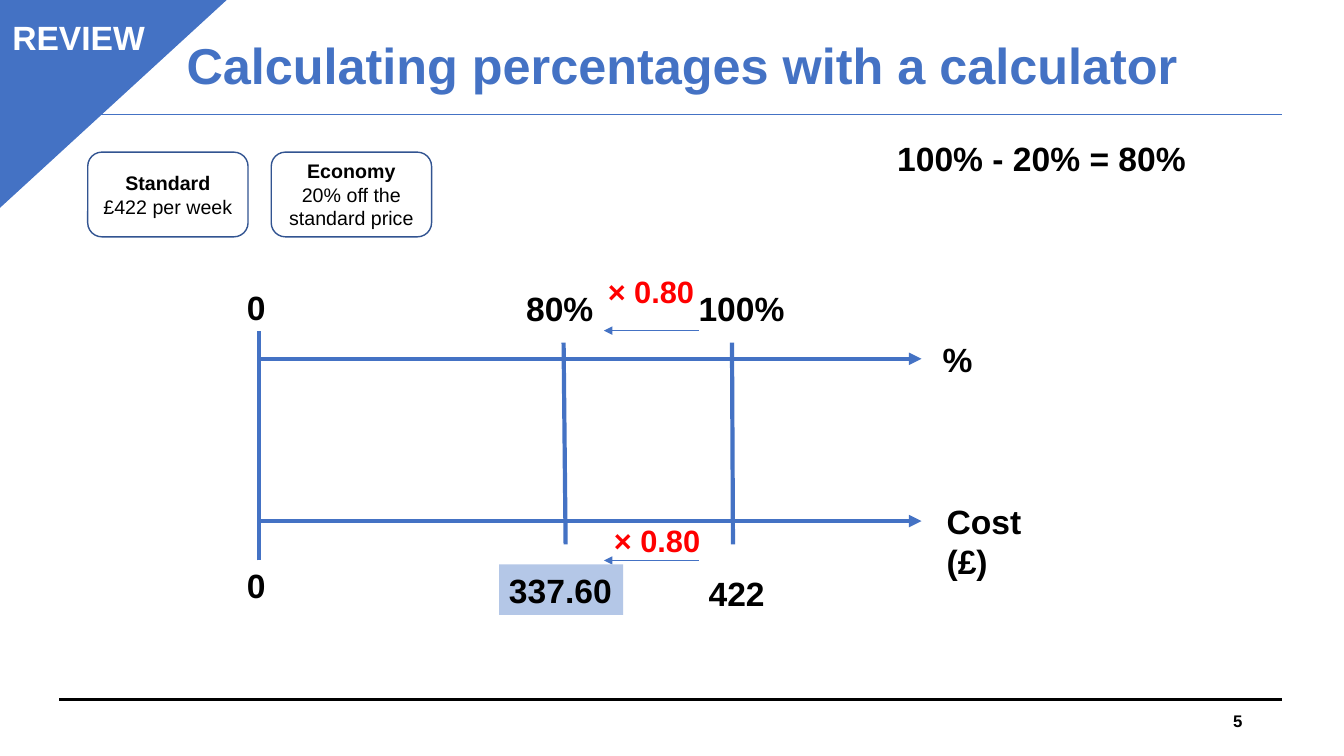
import lxml.etree
import pptx
import pptx.dml.color
import pptx.enum.shapes
import pptx.enum.text
import pptx.oxml.ns
import pptx.util

Inches = pptx.util.Inches
Shapes = pptx.enum.shapes.MSO_SHAPE
Align = pptx.enum.text.PP_ALIGN
Anchor = pptx.enum.text.MSO_ANCHOR
qn = pptx.oxml.ns.qn

BLUE, BLACK, WHITE, RED = "4472C4", "000000", "FFFFFF", "FF0000"
DARK_BLUE, PALE_BLUE = "325491", "B4C7E7"


def set_colour(target, colour):
    """Colour a fill, or a font or line through its fill."""
    fill = getattr(target, "fill", target)
    fill.solid()
    fill.fore_color.rgb = pptx.dml.color.RGBColor.from_string(colour)


def write_text(shape, lines, size=24, colour=BLACK, align=Align.LEFT,
               anchor=Anchor.TOP, wrap=True):
    """Write one paragraph a line; the first is bold."""
    frame = shape.text_frame
    frame.word_wrap = wrap
    frame.vertical_anchor = anchor
    frame.text = "\n".join(lines)
    for index, paragraph in enumerate(frame.paragraphs):
        paragraph.alignment = align
        font = paragraph.runs[0].font
        values = {"name": "Arial", "size": pptx.util.Pt(size), "bold": index == 0}
        for name, value in values.items():
            setattr(font, name, value)
        set_colour(font, colour)


presentation = pptx.Presentation()
presentation.slide_width = Inches(13.33)
presentation.slide_height = Inches(7.5)
slide = presentation.slides.add_slide(presentation.slide_layouts[5])

# Title
title = slide.shapes.title
place = {"left": 1.75, "top": 0.12, "width": 10.47, "height": 1.11}
for name, value in place.items():
    setattr(title, name, Inches(value))
write_text(title, ["Calculating percentages with a calculator"], 36, BLUE,
           anchor=Anchor.MIDDLE)
title.text_frame.paragraphs[0].line_spacing = 0.9

# Rules, number line axes, ticks and multiplier arrows
lines = [
    (0.59, 6.94, 12.72, 6.94, BLACK, 1.5, False),
    (0.59, 1.14, 12.72, 1.14, BLUE, 0.75, False),
    (2.57, 3.56, 9.14, 3.56, BLUE, 3, True),
    (2.57, 5.17, 9.14, 5.17, BLUE, 3, True),
    (2.57, 5.56, 2.57, 3.28, BLUE, 3, False),
    (7.27, 5.4, 7.26, 3.4, BLUE, 3, False),
    (5.61, 5.4, 5.59, 3.4, BLUE, 3, False),
    (6.93, 3.28, 5.99, 3.28, BLUE, 0.5, True),
    (6.93, 5.56, 5.99, 5.56, BLUE, 0.5, True),
]
for *ends, colour, weight, has_arrow in lines:
    connector = slide.shapes.add_connector(
        pptx.enum.shapes.MSO_CONNECTOR.STRAIGHT, *map(Inches, ends))
    set_colour(connector.line, colour)
    connector.line.width = pptx.util.Pt(weight)
    properties = connector.element.spPr
    if has_arrow:
        outline = properties.find(qn("a:ln"))
        lxml.etree.SubElement(outline, qn("a:tailEnd"), type="triangle")
    lxml.etree.SubElement(properties, qn("a:effectLst"))

# Corner flag, price cards and answer box
boxes = [
    (Shapes.ISOSCELES_TRIANGLE, (-0.03, -0.02, 2.29, 2.1), BLUE, BLUE, 1, [], {}),
    (Shapes.RECTANGLE, (0.01, 0.12, 1.54, 0.5), BLUE, BLUE, 0.75, ["REVIEW"],
     {"colour": WHITE, "align": Align.CENTER}),
    (Shapes.RECTANGLE, (4.95, 5.6, 1.23, 0.5), PALE_BLUE, None, 0, ["337.60"], {}),
]
card_format = {"size": 14, "align": Align.CENTER, "anchor": Anchor.MIDDLE}
cards = [["Standard", "£422 per week"], ["Economy", "20% off the standard price"]]
for index, card in enumerate(cards):
    boxes.append((Shapes.ROUNDED_RECTANGLE, (0.87 + 1.82 * index, 1.51, 1.59, 0.84),
                  WHITE, DARK_BLUE, 1, card, card_format))
for kind, position, fill, border, weight, text, text_format in boxes:
    shape = slide.shapes.add_shape(kind, *map(Inches, position))
    shape.shadow.inherit = False
    set_colour(shape.fill, fill)
    if border:
        set_colour(shape.line, border)
        shape.line.width = pptx.util.Pt(weight)
    else:
        shape.line.fill.background()
    if text:
        write_text(shape, text, **text_format)
    else:
        # Point the corner triangle down at the left edge
        shape.adjustments[0] = 1
        shape.rotation = 180

# Labels and slide number
multiplier = {"size": 22, "colour": RED}
labels = [
    ("100% - 20% = 80%", (8.8, 1.32, 3.61, 0.5), {}),
    ("%", (9.25, 3.31, 0.5, 0.5), {"wrap": False}),
    ("Cost (£)", (9.29, 4.92, 1.28, 0.91), {}),
    ("0", (2.35, 2.8, 0.42, 0.5), {}),
    ("0", (2.35, 5.56, 0.42, 0.5), {}),
    ("80%", (5.12, 2.81, 1.13, 0.5), {}),
    ("100%", (6.83, 2.81, 1.13, 0.5), {}),
    ("422", (6.93, 5.63, 1.13, 0.5), {}),
    ("× 0.80", (5.93, 2.66, 1.13, 0.47), multiplier),
    ("× 0.80", (5.99, 5.13, 1.13, 0.47), multiplier),
    ("5", (9.42, 6.95, 3, 0.4),
     {"size": 12, "align": Align.RIGHT, "anchor": Anchor.MIDDLE}),
]
for text, position, text_format in labels:
    label = slide.shapes.add_textbox(*map(Inches, position))
    write_text(label, [text], **text_format)

presentation.save("out.pptx")
